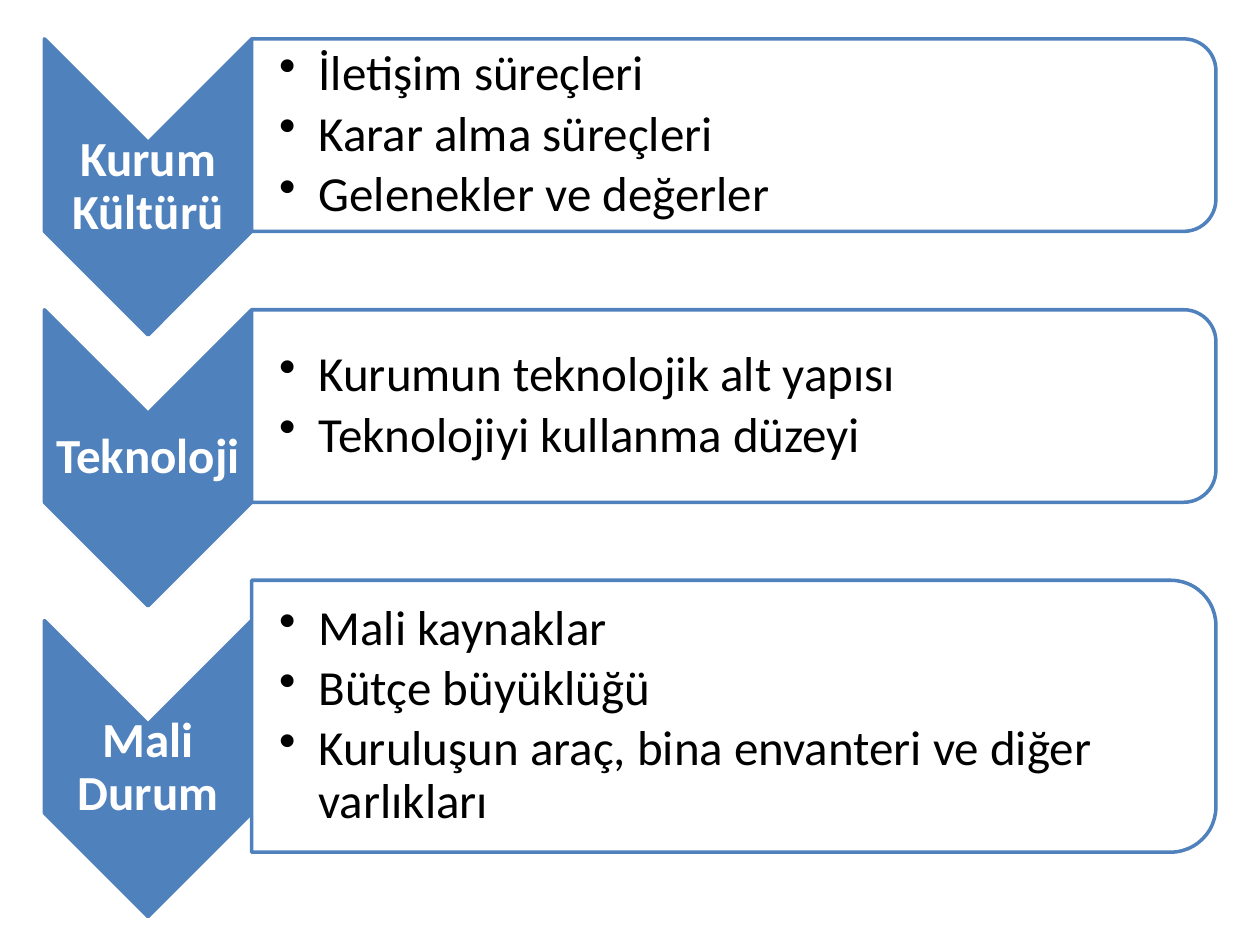
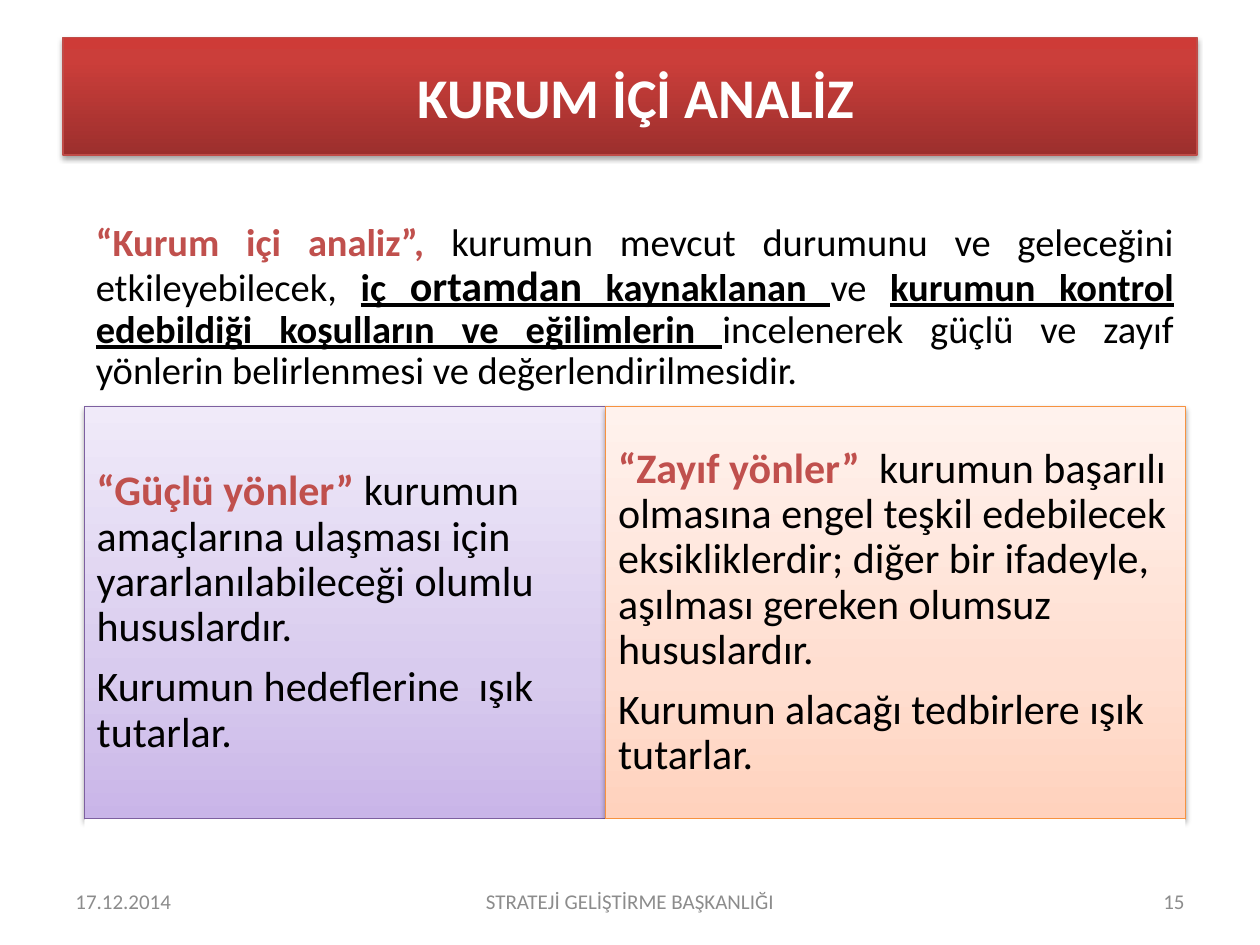
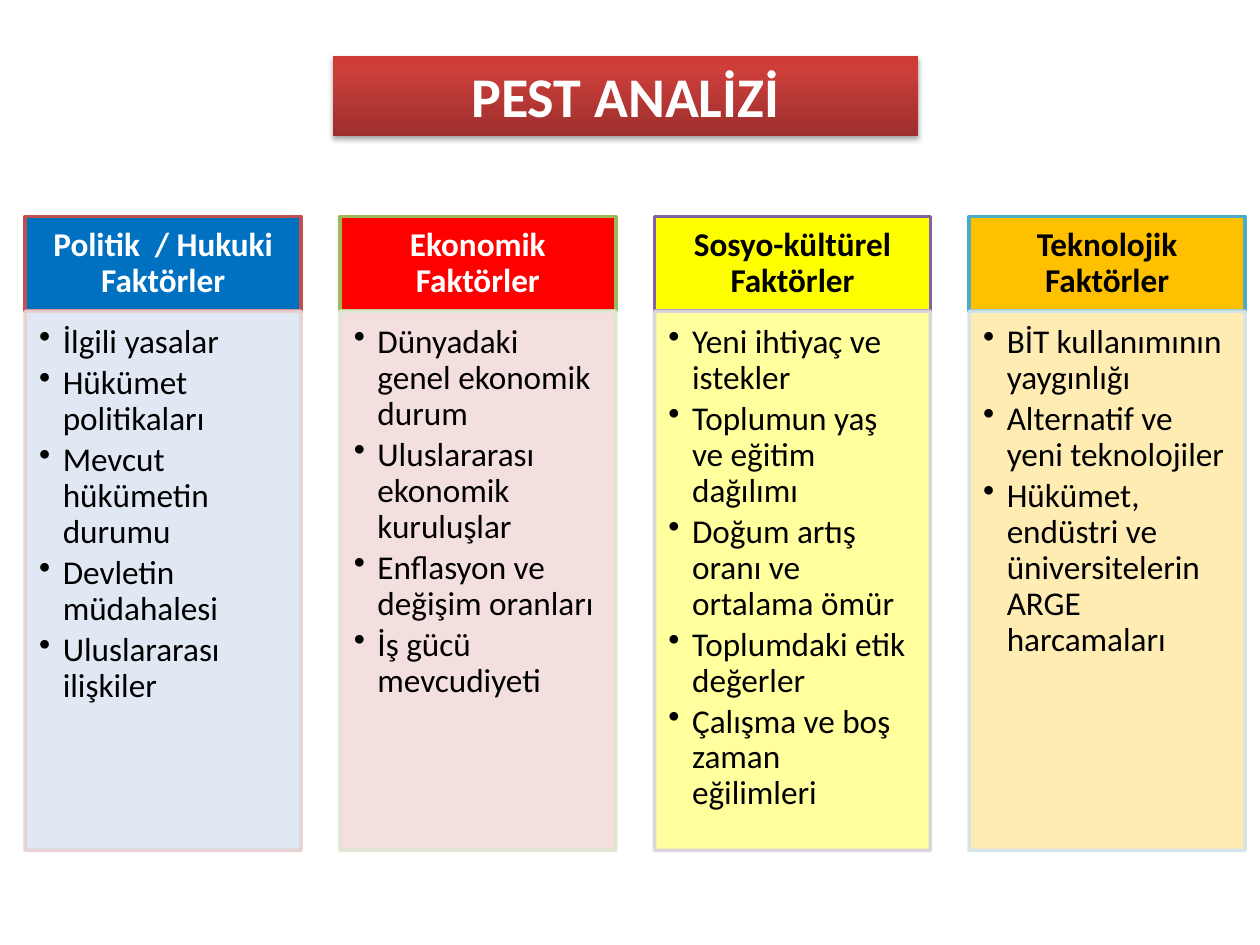
from lxml.etree import SubElement
from pptx import Presentation
from pptx.dml.color import RGBColor
from pptx.enum.shapes import MSO_SHAPE as Preset
from pptx.enum.text import MSO_ANCHOR as Anchor, PP_ALIGN as Align
from pptx.oxml.ns import qn
from pptx.util import Pt

# Shared look
FONT = "Calibri"
WHITE = RGBColor(0xFF, 0xFF, 0xFF)
BLACK = RGBColor(0x00, 0x00, 0x00)
GREY = RGBColor(0x8C, 0x8C, 0x8C)
BLUE = RGBColor(0x4F, 0x81, 0xBD)
RED = RGBColor(0xC0, 0x50, 0x4D)
BANNER_EDGE = RGBColor(0xBF, 0x4C, 0x48)
PURPLE_EDGE = RGBColor(0x7D, 0x60, 0xA0)
ORANGE_EDGE = RGBColor(0xF6, 0x92, 0x40)

# Gradient stops, from the bottom up: percent and colour
BANNER_FILL = [(0, "9C2F2D"), (80, "CB3E3A"), (100, "CE3B37")]
PURPLE_FILL = [(0, "C9B5E8"), (35, "D8CBEE"), (100, "F0EAF9")]
ORANGE_FILL = [(0, "FFD2BD"), (35, "FFDED0"), (100, "FFF2ED")]


def add_block(page, preset, place, fill, line=None, line_width=2, opacity=100, shadow=0):
    """Add a shape; a list as fill is a gradient, shadow is its opacity in percent."""
    shape = page.shapes.add_shape(preset, *[Pt(length) for length in place])
    shape.shadow.inherit = False
    properties = shape.element.spPr
    if isinstance(fill, list):
        shape.fill.gradient()
        shape.fill.gradient_angle = 90
        stops = properties.find(".//" + qn("a:gsLst"))
        stops.clear()
        for percent, color in fill:
            stop = SubElement(stops, qn("a:gs"), pos=str(percent * 1000))
            SubElement(stop, qn("a:srgbClr"), val=color)
    else:
        shape.fill.solid()
        shape.fill.fore_color.rgb = fill
    if line is None:
        shape.line.fill.background()
    else:
        shape.line.color.rgb = line
        shape.line.width = Pt(line_width)
    if opacity < 100:
        for color in properties.findall(".//" + qn("a:srgbClr")):
            SubElement(color, qn("a:alpha"), val=str(opacity * 1000))
    if shadow:
        outer = SubElement(properties.find(qn("a:effectLst")), qn("a:outerShdw"),
                           blurRad=str(Pt(3.1)), dist=str(Pt(1.7)), dir="5400000", rotWithShape="0")
        color = SubElement(outer, qn("a:srgbClr"), val="000000")
        SubElement(color, qn("a:alpha"), val=str(shadow * 1000))
    return shape


def write(box, paragraphs, size, color=BLACK, bold=False, align=Align.LEFT, anchor=Anchor.MIDDLE,
          margins=(7.2, 3.6, 7.2, 3.6), spacing=1.0, after=0, bullet=0):
    """Fill a box; a paragraph is a string or a list of (text, style) spans."""
    frame = box.text_frame
    frame.word_wrap = True
    frame.vertical_anchor = anchor
    frame.margin_left, frame.margin_top, frame.margin_right, frame.margin_bottom = map(Pt, margins)
    for index, content in enumerate(paragraphs):
        para = frame.add_paragraph() if index else frame.paragraphs[0]
        para.alignment = align
        para.line_spacing = spacing
        para.space_after = Pt(after * size)
        if bullet:
            settings = para._p.get_or_add_pPr()
            settings.set("marL", str(Pt(bullet)))
            settings.set("indent", str(-Pt(bullet)))
            SubElement(settings, qn("a:buChar"), char="•")
        for text, style in [(content, {})] if isinstance(content, str) else content:
            span = para.add_run()
            span.text = text
            span.font.name = FONT
            span.font.size = Pt(style.get("size", size))
            span.font.bold = style.get("bold", bold)
            span.font.underline = style.get("underline", False)
            span.font.color.rgb = style.get("color", color)


deck = Presentation()
deck.slide_width, deck.slide_height = Pt(720), Pt(540)
blank = deck.slide_layouts[6]

# Slide 1: chevron list
page = deck.slides.add_slide(blank)
CHEVRON_LEFT, CHEVRON_WIDTH, CHEVRON_HEIGHT = 25.4, 118.4, 169.2
PANEL_LEFT, PANEL_WIDTH = 143.8, 551
topics = [
    ("Kurum Kültürü", 22.2, 22.2, 110,
     ["İletişim süreçleri", "Karar alma süreçleri", "Gelenekler ve değerler"]),
    ("Teknoloji", 177, 177, 110,
     ["Kurumun teknolojik alt yapısı", "Teknolojiyi kullanma düzeyi"]),
    ("Mali Durum", 354.6, 331.6, 155.4,
     ["Mali kaynaklar", "Bütçe büyüklüğü", "Kuruluşun araç, bina envanteri ve diğer varlıkları"]),
]
for label, chevron_top, panel_top, panel_height, points in topics:
    # Both shapes are turned a quarter, so width and height swap around the centre
    for preset, left, top, width, height, fill, opacity in [
        (Preset.CHEVRON, CHEVRON_LEFT, chevron_top, CHEVRON_WIDTH, CHEVRON_HEIGHT, BLUE, 100),
        (Preset.ROUND_2_SAME_RECTANGLE, PANEL_LEFT, panel_top, PANEL_WIDTH, panel_height, WHITE, 100),
    ]:
        shift = (width - height) / 2
        shape = add_block(page, preset, (left + shift, top - shift, height, width), fill, BLUE,
                          opacity=opacity)
        shape.rotation = 90

    box = page.shapes.add_textbox(Pt(CHEVRON_LEFT), Pt(chevron_top + CHEVRON_WIDTH / 2),
                                  Pt(CHEVRON_WIDTH), Pt(CHEVRON_HEIGHT - CHEVRON_WIDTH))
    write(box, [label], 28, WHITE, bold=True, align=Align.CENTER, margins=(1.4,) * 4,
          spacing=0.9, after=0.35)

    inset = panel_height * 0.05
    box = page.shapes.add_textbox(Pt(PANEL_LEFT), Pt(panel_top + inset),
                                  Pt(PANEL_WIDTH - inset), Pt(panel_height - 2 * inset))
    write(box, points, 28, margins=(15.8, 1.4, 1.4, 1.4), spacing=0.9, after=0.15, bullet=22.5)

# Slide 2: internal analysis
page = deck.slides.add_slide(blank)
footers = [
    ("17.12.2014", 36, 168, Align.LEFT),
    ("STRATEJİ GELİŞTİRME BAŞKANLIĞI", 246, 228, Align.CENTER),
    ("15", 516, 168, Align.RIGHT),
]
for text, left, width, align in footers:
    box = page.shapes.add_textbox(Pt(left), Pt(500.5), Pt(width), Pt(28.75))
    write(box, [text], 12, GREY, align=align)

banner = add_block(page, Preset.RECTANGLE, (36, 21.6, 648, 67), BANNER_FILL, BANNER_EDGE, 0.75, shadow=35)
write(banner, [" KURUM İÇİ ANALİZ"], 32, WHITE, bold=True, align=Align.CENTER)

# Definition
term = {"color": RED, "bold": True}
stress = {"bold": True, "underline": True}
definition = add_block(page, Preset.RECTANGLE, (48.2, 113.8, 629.3, 124.6), WHITE)
write(definition, [[
    ("“Kurum içi analiz”, ", term),
    ("kurumun mevcut durumunu ve geleceğini etkileyebilecek, ", {}),
    ("iç ", stress),
    ("ortamdan", {**stress, "size": 24}),
    (" kaynaklanan ", stress),
    ("ve ", {}),
    ("kurumun kontrol edebildiği koşulların ve eğilimlerin ", stress),
    ("incelenerek güçlü ve zayıf yönlerin belirlenmesi ve değerlendirilmesidir.", {}),
]], 22, align=Align.JUSTIFY, margins=(6.6,) * 4, spacing=0.9, after=0.35)

# Strengths and weaknesses
sides = [
    (48.2, 298, PURPLE_FILL, PURPLE_EDGE, "“Güçlü yönler” ",
     "kurumun amaçlarına ulaşması için yararlanılabileceği olumlu hususlardır.",
     "Kurumun hedeflerine  ışık  tutarlar."),
    (346.2, 331.3, ORANGE_FILL, ORANGE_EDGE, "“Zayıf yönler”  ",
     "kurumun başarılı olmasına engel teşkil edebilecek eksikliklerdir; "
     "diğer bir ifadeyle, aşılması gereken olumsuz hususlardır.",
     "Kurumun alacağı tedbirlere ışık tutarlar."),
]
for left, width, fill, edge, name, meaning, use in sides:
    panel = add_block(page, Preset.RECTANGLE, (left, 232.4, width, 235.6), fill, edge, 0.75, shadow=38)
    write(panel, [[(name, term), (meaning, {})], use], 24, margins=(7.2,) * 4, spacing=0.9, after=0.35)

# White strip that trims the panel shadows
add_block(page, Preset.RECTANGLE, (48.2, 468, 629.3, 26), WHITE)

# Slide 3: PEST columns
page = deck.slides.add_slide(blank)
COLUMN_LEFT, COLUMN_STEP, COLUMN_WIDTH = 14.4, 179.8, 157.7
HEAD_TOP, HEAD_HEIGHT, BODY_HEIGHT = 123.8, 54, 308.2
# Heading, its text colour, head fill and edge, body fill and edge, points
columns = [
    ("Politik  / Hukuki Faktörler", WHITE, "0070C0", "C0504D", "DCE6F2", "E8D0D0",
     ["İlgili yasalar", "Hükümet politikaları", "Mevcut hükümetin durumu",
      "Devletin müdahalesi", "Uluslararası ilişkiler"]),
    ("Ekonomik Faktörler", WHITE, "FF0000", "9BBB59", "F2DCDB", "DEE7D1",
     ["Dünyadaki genel ekonomik durum", "Uluslararası ekonomik kuruluşlar",
      "Enflasyon ve değişim oranları", "İş gücü mevcudiyeti"]),
    ("Sosyo-kültürel Faktörler", BLACK, "FFFF00", "8064A2", "FFFF93", "D8D3E0",
     ["Yeni ihtiyaç ve istekler", "Toplumun yaş ve eğitim dağılımı",
      "Doğum artış oranı ve ortalama ömür", "Toplumdaki etik değerler",
      "Çalışma ve boş zaman eğilimleri"]),
    ("Teknolojik Faktörler", BLACK, "FFC000", "4BACC6", "FFEBAB", "D0E3EA",
     ["BİT kullanımının yaygınlığı", "Alternatif ve yeni teknolojiler",
      "Hükümet, endüstri ve üniversitelerin ARGE harcamaları"]),
]
for index, (heading, ink, *colors, points) in enumerate(columns):
    left = COLUMN_LEFT + index * COLUMN_STEP
    head_fill, head_edge, body_fill, body_edge = map(RGBColor.from_string, colors)
    head = add_block(page, Preset.RECTANGLE, (left, HEAD_TOP, COLUMN_WIDTH, HEAD_HEIGHT),
                     head_fill, head_edge)
    write(head, [heading], 19, ink, bold=True, align=Align.CENTER,
          margins=(10.6, 6, 10.6, 6), spacing=0.9, after=0.35)
    body = add_block(page, Preset.RECTANGLE, (left, HEAD_TOP + HEAD_HEIGHT, COLUMN_WIDTH, BODY_HEIGHT),
                     body_fill, body_edge, opacity=90)
    write(body, points, 19, anchor=Anchor.TOP, margins=(8, 8, 10.6, 12),
          spacing=0.9, after=0.15, bullet=13.5)

banner = add_block(page, Preset.RECTANGLE, (190, 31.8, 334.8, 46), BANNER_FILL, shadow=35)
write(banner, ["PEST ANALİZİ"], 32, WHITE, bold=True, align=Align.CENTER, anchor=Anchor.TOP)

deck.save("out.pptx")
